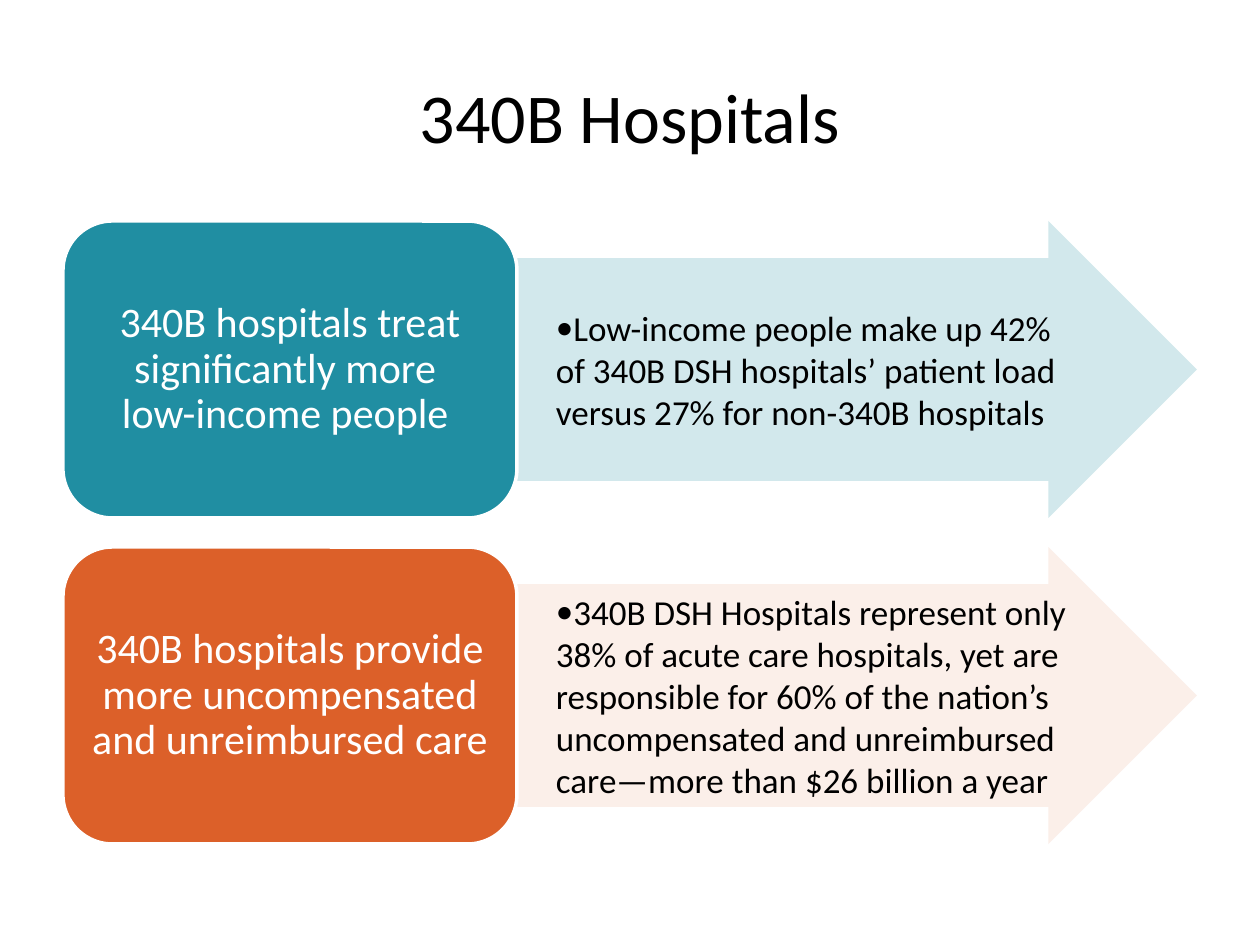
from lxml.etree import SubElement
from pptx import Presentation
from pptx.dml.color import RGBColor
from pptx.enum.shapes import MSO_SHAPE
from pptx.enum.text import MSO_ANCHOR, PP_ALIGN
from pptx.oxml.ns import qn
from pptx.util import Emu, Pt

TITLE = "340B Hospitals"
CLAIMS = [
    ("340B hospitals treat significantly more \vlow-income people ",
     "Low-income people make up 42% of 340B DSH hospitals’ patient load "
     "versus 27% for non-340B hospitals",
     "teal", "pale_teal"),
    ("340B hospitals provide more uncompensated and unreimbursed care",
     "340B DSH Hospitals represent only 38% of acute care hospitals, yet are "
     "responsible for 60% of the nation’s uncompensated and unreimbursed "
     "care—more than $26 billion a year",
     "orange", "pale_orange"),
]
COLORS = {
    "black": "000000", "white": "FFFFFF",
    "teal": "208EA2", "pale_teal": "D2E8EC",
    "orange": "DC6029", "pale_orange": "FBEFE9",
}
FONT = "Calibri"
LEFT, TOP, PITCH = 63, 221, 326
CLAIM_W, ARROW_W, ROW_H = 454, 680, 297
INSET, BULLET_INDENT = 1, 38


def px(n):
    return Emu(round(n * 914400 / 126))


def color(name):
    return RGBColor.from_string(COLORS[name])


def write(shape, text, size, ink, align):
    frame = shape.text_frame
    frame.word_wrap = True
    frame.vertical_anchor = MSO_ANCHOR.MIDDLE
    paragraph = frame.paragraphs[0]
    paragraph.text = text
    paragraph.alignment = align
    paragraph.font.name = FONT
    paragraph.font.size = Pt(size)
    paragraph.font.color.rgb = color(ink)
    return paragraph


def add_block(slide, preset, left, top, width, fill):
    block = slide.shapes.add_shape(preset, px(left), px(top), px(width), px(ROW_H))
    block.shadow.inherit = False
    block.fill.solid()
    block.fill.fore_color.rgb = color(fill)
    return block


def add_evidence(slide, top, text, fill):
    arrow = add_block(slide, MSO_SHAPE.RIGHT_ARROW, LEFT + CLAIM_W, top, ARROW_W, fill)
    arrow.adjustments[0] = 0.75
    arrow.adjustments[1] = 0.5
    arrow.line.fill.background()
    frame = arrow.text_frame
    frame.margin_left = frame.margin_right = px(INSET)
    frame.margin_top = frame.margin_bottom = px(INSET)
    properties = frame.paragraphs[0]._p.get_or_add_pPr()
    properties.set("marL", str(px(BULLET_INDENT)))
    properties.set("indent", "0")
    SubElement(properties, qn("a:buFont")).set("typeface", FONT)
    SubElement(properties, qn("a:buChar")).set("char", "•")
    paragraph = write(arrow, text, 20, "black", PP_ALIGN.LEFT)
    paragraph.level = 1
    paragraph.space_after = Pt(3)


def add_claim(slide, top, text, fill):
    claim = add_block(slide, MSO_SHAPE.ROUNDED_RECTANGLE, LEFT, top, CLAIM_W, fill)
    claim.line.color.rgb = color("white")
    claim.line.width = Pt(2)
    paragraph = write(claim, text, 24, "white", PP_ALIGN.CENTER)
    paragraph.line_spacing = 0.9


def main():
    deck = Presentation()
    deck.slide_width, deck.slide_height = px(1260), px(945)
    slide = deck.slides.add_slide(deck.slide_layouts[6])
    title = slide.shapes.add_textbox(px(LEFT), px(42), px(1134), px(147))
    write(title, TITLE, 40, "black", PP_ALIGN.CENTER)
    for row, (claim, evidence, claim_fill, evidence_fill) in enumerate(CLAIMS):
        top = TOP + row * PITCH
        add_evidence(slide, top, evidence, evidence_fill)
        add_claim(slide, top, claim, claim_fill)
    deck.save("out.pptx")


if __name__ == "__main__":
    main()
